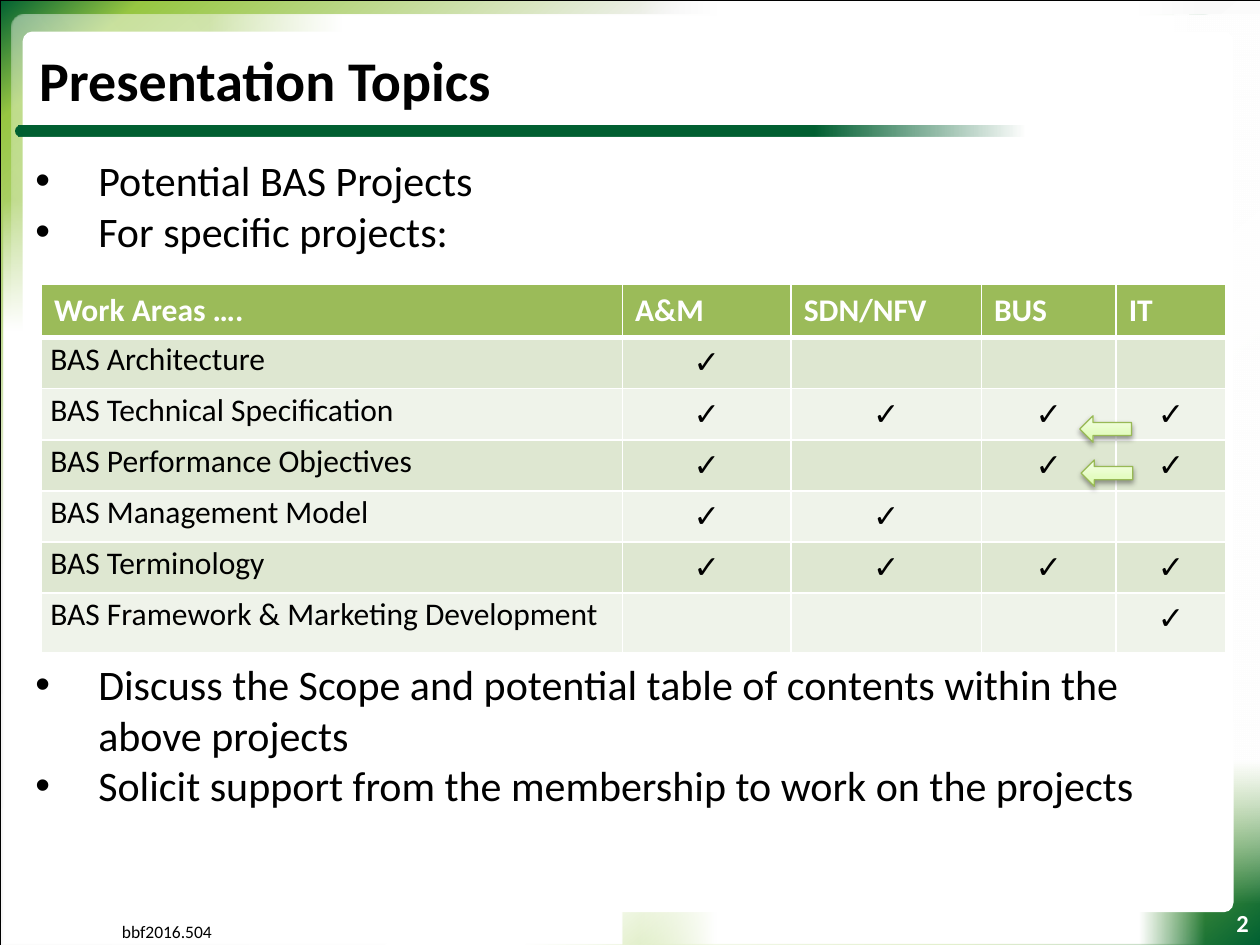
"""Build the Presentation Topics slide with its work area table."""
from lxml import etree
from pptx import Presentation
from pptx.dml.color import RGBColor
from pptx.enum.shapes import MSO_SHAPE
from pptx.enum.text import MSO_ANCHOR, MSO_AUTO_SIZE, PP_ALIGN
from pptx.oxml.ns import qn
from pptx.util import Inches, Pt

RECTANGLE, ROUNDED = MSO_SHAPE.RECTANGLE, MSO_SHAPE.ROUNDED_RECTANGLE
OVAL, LEFT_ARROW = MSO_SHAPE.OVAL, MSO_SHAPE.LEFT_ARROW
LEFT, CENTER, RIGHT = PP_ALIGN.LEFT, PP_ALIGN.CENTER, PP_ALIGN.RIGHT
MIDDLE, NO_AUTOFIT = MSO_ANCHOR.MIDDLE, MSO_AUTO_SIZE.NONE
FONT = "Calibri"
COLORS = {
    "black": "000000", "white": "FFFFFF", "dark green": "006032",
    "lime": "97C642", "gray": "F2F2F2", "header": "9BBB59",
    "odd row": "DEE7D1", "even row": "EFF3EA", "arrow line": "98B955",
    "arrow dark": "DAFDA7", "arrow mid": "E4FCC2", "arrow light": "F5FFE7",
}

presentation = Presentation()
presentation.slide_width, presentation.slide_height = Inches(10), Inches(7.5)
slide = presentation.slides.add_slide(presentation.slide_layouts[3])
COLUMN = presentation.slide_width / 100
ROW = presentation.slide_height / 75


def add_panel(kind, box, stops, angle=0, corner=None):
    """Draw a shape in grid units, filled by (position, color, opacity) stops."""
    left, top, width, height = box
    shape = slide.shapes.add_shape(
        kind, int(left * COLUMN), int(top * ROW), int(width * COLUMN), int(height * ROW))
    shape.shadow.inherit = False
    shape.line.fill.background()
    if corner is not None:
        shape.adjustments[0] = corner
    if len(stops) == 1:
        shape.fill.solid()
        shape.fill.fore_color.rgb = RGBColor.from_string(COLORS[stops[0][1]])
        return shape
    shape.fill.gradient()
    shape.fill.gradient_angle = (360 - angle) % 360
    stop_list = shape._element.spPr.find(qn("a:gradFill")).find(qn("a:gsLst"))
    for old_stop in list(stop_list):
        stop_list.remove(old_stop)
    for position, color, opacity in stops:
        stop = etree.SubElement(stop_list, qn("a:gs"), pos=str(position * 1000))
        value = etree.SubElement(stop, qn("a:srgbClr"), val=COLORS[color])
        etree.SubElement(value, qn("a:alpha"), val=str(opacity * 1000))
    return shape


def write(paragraph, text, size, color="black", bold=False, align=LEFT):
    """Fill a paragraph and format its runs."""
    paragraph.text = text
    paragraph.alignment = align
    for run in paragraph.runs:
        run.font.name, run.font.size, run.font.bold = FONT, Pt(size), bold
        run.font.color.rgb = RGBColor.from_string(COLORS[color])


fade_in = [(5, "white", 0), (18, "white", 100), (89, "white", 100)]
background_stops = [(0, "dark green", 100), (6, "lime", 100), (29, "gray", 100),
                    (69, "white", 100), (87, "lime", 100), (100, "dark green", 100)]
frame_stops = [(0, "dark green", 48), (6, "lime", 52), (34, "gray", 50),
               (62, "white", 48), (91, "lime", 51), (100, "dark green", 52)]
bottom_fade = [(9, "white", 0), (25, "white", 100), (87, "white", 100)]
side_fade = [(1, "white", 0), (17, "white", 100), (87, "white", 100)]
rule_stops = [(0, "dark green", 0), (21, "dark green", 100)]

background = add_panel(RECTANGLE, (0, 0, 100.1, 75), background_stops, 50)
background.line.color.rgb = RGBColor.from_string(COLORS["black"])
background.line.width = Pt(0.25)
for kind, box, stops, angle, corner in [
    (ROUNDED, (0.9, 1.2, 95.6, 64.4), frame_stops, 140, 0.017),
    (RECTANGLE, (12.5, 1.2, 81.8, 68.8), fade_in, 0, None),
    (RECTANGLE, (0.3, 10, 49.1, 65), bottom_fade, 90, None),
    (RECTANGLE, (48.3, 0.1, 47.3, 74.9), fade_in + [(100, "white", 0)], 0, None),
    (RECTANGLE, (93.2, 1.2, 6.9, 71.2), side_fade, 270, None),
    (ROUNDED, (1.8, 2.5, 96.1, 69.9), [(0, "white", 100)], 0, 0.011),
    (OVAL, (1.2, 10, 0.6, 0.8), [(0, "dark green", 100)], 0, None),
    (ROUNDED, (1.5, 10, 79.8, 0.8), rule_stops, 180, 0),
]:
    add_panel(kind, box, stops, angle, corner)

for text, (left, top, width, height), size, color, bold, align in [
    ("2", (95.7, 71.6, 4.4, 3.4), 14, "white", True, RIGHT),
    ("bbf2016.504", (8.7, 72.6, 12, 2.7), 10, "black", False, LEFT),
]:
    text_box = slide.shapes.add_textbox(
        int(left * COLUMN), int(top * ROW), int(width * COLUMN), int(height * ROW))
    text_box.text_frame.word_wrap = True
    write(text_box.text_frame.paragraphs[0], text, size, color, bold, align)

title, upper_list, lower_list = slide.placeholders
for placeholder, (left, top, width, height) in [
    (title, (1.8, 2.5, 91.8, 7.5)),
    (upper_list, (1.8, 11.8, 95.5, 9.5)),
    (lower_list, (1.8, 51.8, 95.5, 20.5)),
]:
    placeholder.left, placeholder.top = int(left * COLUMN), int(top * ROW)
    placeholder.width, placeholder.height = int(width * COLUMN), int(height * ROW)
    placeholder.text_frame.auto_size = NO_AUTOFIT
    slide.shapes._spTree.append(placeholder._element)

title_frame = title.text_frame
title_frame.vertical_anchor = MIDDLE
title_frame.margin_left = title_frame.margin_right = Inches(0.13)
title_frame.margin_top = title_frame.margin_bottom = Inches(0.07)
write(title_frame.paragraphs[0], "Presentation Topics", 32, bold=True)

for placeholder, topics in [
    (upper_list, ["Potential BAS Projects", "For specific projects:"]),
    (lower_list, [
        "Discuss the Scope and potential table of contents within the above projects",
        "Solicit support from the membership to work on the projects"]),
]:
    placeholder.text_frame.text = "\n".join(topics)
    for paragraph, topic in zip(placeholder.text_frame.paragraphs, topics):
        properties = paragraph._p.get_or_add_pPr()
        properties.set("marL", str(Inches(0.5)))
        properties.set("indent", str(-Inches(0.5)))
        etree.SubElement(properties, qn("a:buChar"), char="•")
        paragraph.space_before = Pt(0)
        write(paragraph, topic, 24)

work_areas = [
    ("Work Areas ….", "A&M", "SDN/NFV", "BUS", "IT"),
    ("BAS Architecture", "✓", "", "", ""),
    ("BAS Technical Specification", "✓", "✓", "✓", "✓"),
    ("BAS Performance Objectives", "✓", "", "✓", "✓"),
    ("BAS Management Model", "✓", "✓", "", ""),
    ("BAS Terminology", "✓", "✓", "✓", "✓"),
    ("BAS Framework & Marketing Development", "", "", "", "✓"),
]
column_widths = [46.1, 13.4, 15.1, 10.7, 8.7]
row_heights = [4.2] + [4] * 5 + [4.7]
table = slide.shapes.add_table(
    len(row_heights), len(column_widths), int(3.3 * COLUMN), int(22.6 * ROW),
    int(sum(column_widths) * COLUMN), int(sum(row_heights) * ROW)).table
for table_column, width in zip(table.columns, column_widths):
    table_column.width = int(width * COLUMN)
for table_row, height in zip(table.rows, row_heights):
    table_row.height = int(height * ROW)

for row_index, values in enumerate(work_areas):
    is_header = row_index == 0
    fill = "header" if is_header else "odd row" if row_index % 2 else "even row"
    for column_index, value in enumerate(values):
        cell = table.cell(row_index, column_index)
        paragraph = cell.text_frame.paragraphs[0]
        align = LEFT if is_header or column_index == 0 else CENTER
        write(paragraph, value, 18, "white" if is_header else "black", is_header, align)
        if column_index == 0 and not is_header:
            cell.margin_left = cell.margin_right = Inches(0.07)
            cell.margin_top = cell.margin_bottom = 0
            paragraph.line_spacing = 1.07
        cell_properties = cell._tc.get_or_add_tcPr()
        for side in ("lnL", "lnR", "lnT", "lnB"):
            header_edge = (side == "lnB" and is_header) or (side == "lnT" and row_index == 1)
            border = etree.SubElement(
                cell_properties, qn("a:" + side), w=str(Pt(3 if header_edge else 1)))
            border_fill = etree.SubElement(border, qn("a:solidFill"))
            etree.SubElement(border_fill, qn("a:srgbClr"), val=COLORS["white"])
        cell.fill.solid()
        cell.fill.fore_color.rgb = RGBColor.from_string(COLORS[fill])

arrow_stops = [(0, "arrow dark", 100), (35, "arrow mid", 100), (100, "arrow light", 100)]
for left, top in [(85.7, 33), (85.8, 36.5)]:
    arrow = add_panel(LEFT_ARROW, (left, top, 4.1, 2.1), arrow_stops, 270)
    arrow.line.color.rgb = RGBColor.from_string(COLORS["arrow line"])
    arrow.line.width = Pt(0.75)
    shadow = etree.SubElement(
        arrow._element.spPr.find(qn("a:effectLst")), qn("a:outerShdw"),
        blurRad=str(Pt(3.1)), dist=str(Pt(1.6)), dir="5400000", rotWithShape="0")
    shadow_color = etree.SubElement(shadow, qn("a:srgbClr"), val=COLORS["black"])
    etree.SubElement(shadow_color, qn("a:alpha"), val="38000")

presentation.save("out.pptx")
